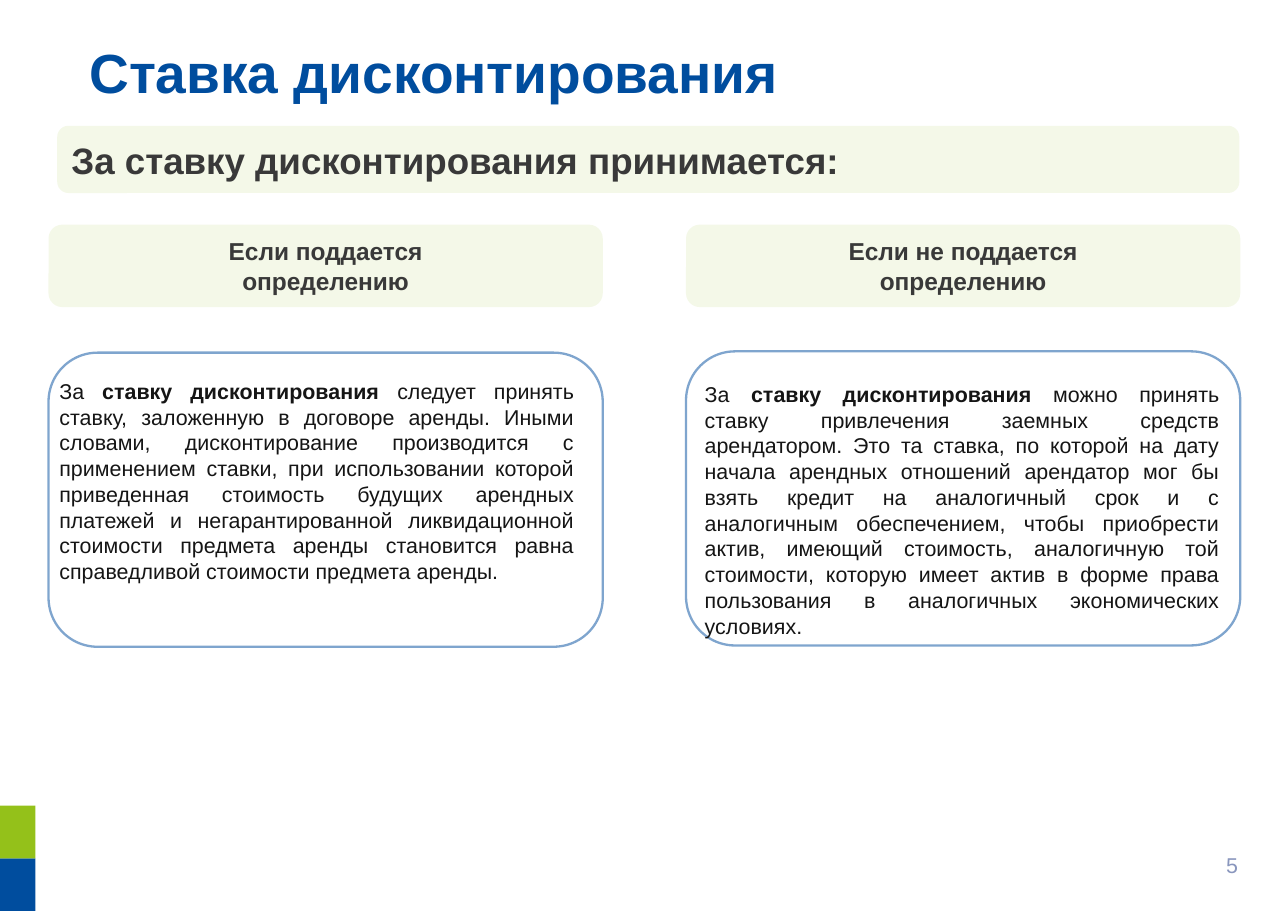
import pptx
import pptx.dml.color
import pptx.enum.shapes
import pptx.enum.text
import pptx.oxml.ns
import pptx.util
from lxml import etree
from pptx.util import Cm

COLORS = {"blue": "004D9E", "green": "94C11A", "pale": "97C026",
          "heading": "393939", "body": "151515", "number": "8996BD"}
FONTS = {
    "title": {"size": 36, "bold": True, "color": "blue"},
    "banner": {"size": 24, "bold": True, "color": "heading"},
    "case": {"size": 16, "bold": True, "color": "heading"},
    "body": {"size": 14, "bold": False, "color": "body"},
    "number": {"size": 14, "bold": False, "color": "number"},
}
ALIGN = pptx.enum.text.PP_ALIGN
ANCHOR = pptx.enum.text.MSO_ANCHOR
SHAPE = pptx.enum.shapes.MSO_SHAPE
TERM = "ставку дисконтирования"
COLUMN_WIDTH = 12.78
CASES = [
    {"left": 1.12, "frame_top": 8.13, "text_left": 1.12, "text_top": 8.59,
     "heading": ["Если поддается", "определению"],
     "text": " следует принять ставку, заложенную в договоре аренды. Иными словами, "
             "дисконтирование производится с применением ставки, при использовании которой "
             "приведенная стоимость будущих арендных платежей и негарантированной "
             "ликвидационной стоимости предмета аренды становится равна справедливой "
             "стоимости предмета аренды."},
    {"left": 15.82, "frame_top": 8.1, "text_left": 16, "text_top": 8.66,
     "heading": ["Если не поддается", "определению"],
     "text": " можно принять ставку привлечения заемных средств арендатором. Это та ставка, "
             "по которой на дату начала арендных отношений арендатор мог бы взять кредит на "
             "аналогичный срок и с аналогичным обеспечением, чтобы приобрести актив, имеющий "
             "стоимость, аналогичную той стоимости, которую имеет актив в форме права "
             "пользования в аналогичных экономических условиях."},
]


def rgb(name):
    """Return the named palette colour."""
    return pptx.dml.color.RGBColor.from_string(COLORS[name])


def paint(fill, color, opacity=100):
    """Give a fill a solid colour with an opacity in percent."""
    fill.solid()
    fill.fore_color.rgb = rgb(color)
    if opacity < 100:
        element = fill._xPr.find(".//" + pptx.oxml.ns.qn("a:srgbClr"))
        etree.SubElement(element, pptx.oxml.ns.qn("a:alpha"), val=str(opacity * 1000))


def format_font(font, style, **changes):
    """Apply a named font style with optional changes."""
    values = {**FONTS[style], **changes}
    font.color.rgb = rgb(values.pop("color"))
    values.update(name="Arial", size=pptx.util.Pt(values["size"]))
    for attribute, value in values.items():
        setattr(font, attribute, value)


def write(shape, paragraphs, style, alignment, anchor):
    """Write paragraphs made of (text, bold) runs, or of plain strings."""
    frame = shape.text_frame
    frame.word_wrap = True
    frame.vertical_anchor = anchor
    for index, runs in enumerate(paragraphs):
        paragraph = frame.add_paragraph() if index else frame.paragraphs[0]
        paragraph.alignment = alignment
        if isinstance(runs, str):
            runs = [(runs, FONTS[style]["bold"])]
        for text, bold in runs:
            run = paragraph.add_run()
            run.text = text
            format_font(run.font, style, bold=bold)
    return frame


def add_text(slide, box, paragraphs, style, alignment=ALIGN.LEFT, anchor=ANCHOR.TOP):
    """Add a text box."""
    shape = slide.shapes.add_textbox(*map(Cm, box))
    return write(shape, paragraphs, style, alignment, anchor)


def add_block(slide, kind, box, color, opacity=100):
    """Add a filled shape without an outline."""
    shape = slide.shapes.add_shape(kind, *map(Cm, box))
    shape.shadow.inherit = False
    shape.line.fill.background()
    paint(shape.fill, color, opacity)
    return shape


def add_panel(slide, box, paragraphs, style, alignment):
    """Add a pale rounded panel with text."""
    shape = add_block(slide, SHAPE.ROUNDED_RECTANGLE, box, "pale", 10)
    write(shape, paragraphs, style, alignment, ANCHOR.MIDDLE)


def add_frame(slide, box):
    """Add an empty rounded frame."""
    shape = slide.shapes.add_shape(SHAPE.ROUNDED_RECTANGLE, *map(Cm, box))
    shape.shadow.inherit = False
    shape.fill.background()
    shape.line.width = pptx.util.Pt(1.5)
    paint(shape.line.fill, "blue", 50)


def add_title(slide):
    """Add the slide title."""
    frame = add_text(slide, (2.06, 1.07, 23.65, 1.35), ["Ставка дисконтирования"],
                     "title", anchor=ANCHOR.MIDDLE)
    for side in ("left", "top", "right", "bottom"):
        setattr(frame, f"margin_{side}", 0)
    frame.paragraphs[0].line_spacing = pptx.util.Pt(38)


def add_case(slide, case):
    """Add one column: heading, frame and explanation."""
    add_panel(slide, (case["left"], 5.18, COLUMN_WIDTH, 1.9), case["heading"],
              "case", ALIGN.CENTER)
    add_frame(slide, (case["left"], case["frame_top"], COLUMN_WIDTH, 6.78))
    add_text(slide, (case["text_left"], case["text_top"], 12.37, 6),
             [[("За ", False), (TERM, True), (case["text"], False)]],
             "body", ALIGN.JUSTIFY)


def main():
    """Build and save the slide."""
    presentation = pptx.Presentation()
    presentation.slide_width, presentation.slide_height = Cm(29.7), Cm(21)
    slide = presentation.slides.add_slide(presentation.slide_layouts[6])
    for top, color in ((19.79, "blue"), (18.57, "green")):
        add_block(slide, SHAPE.RECTANGLE, (0, top, 0.82, 1.22), color)
    add_title(slide)
    add_panel(slide, (1.32, 2.9, 27.26, 1.55),
              ["За ставку дисконтирования принимается:"], "banner", ALIGN.LEFT)
    for case in CASES:
        add_case(slide, case)
    add_text(slide, (26.44, 19.51, 2.36, 1.12), ["5"], "number", ALIGN.RIGHT)
    presentation.save("out.pptx")


if __name__ == "__main__":
    main()
